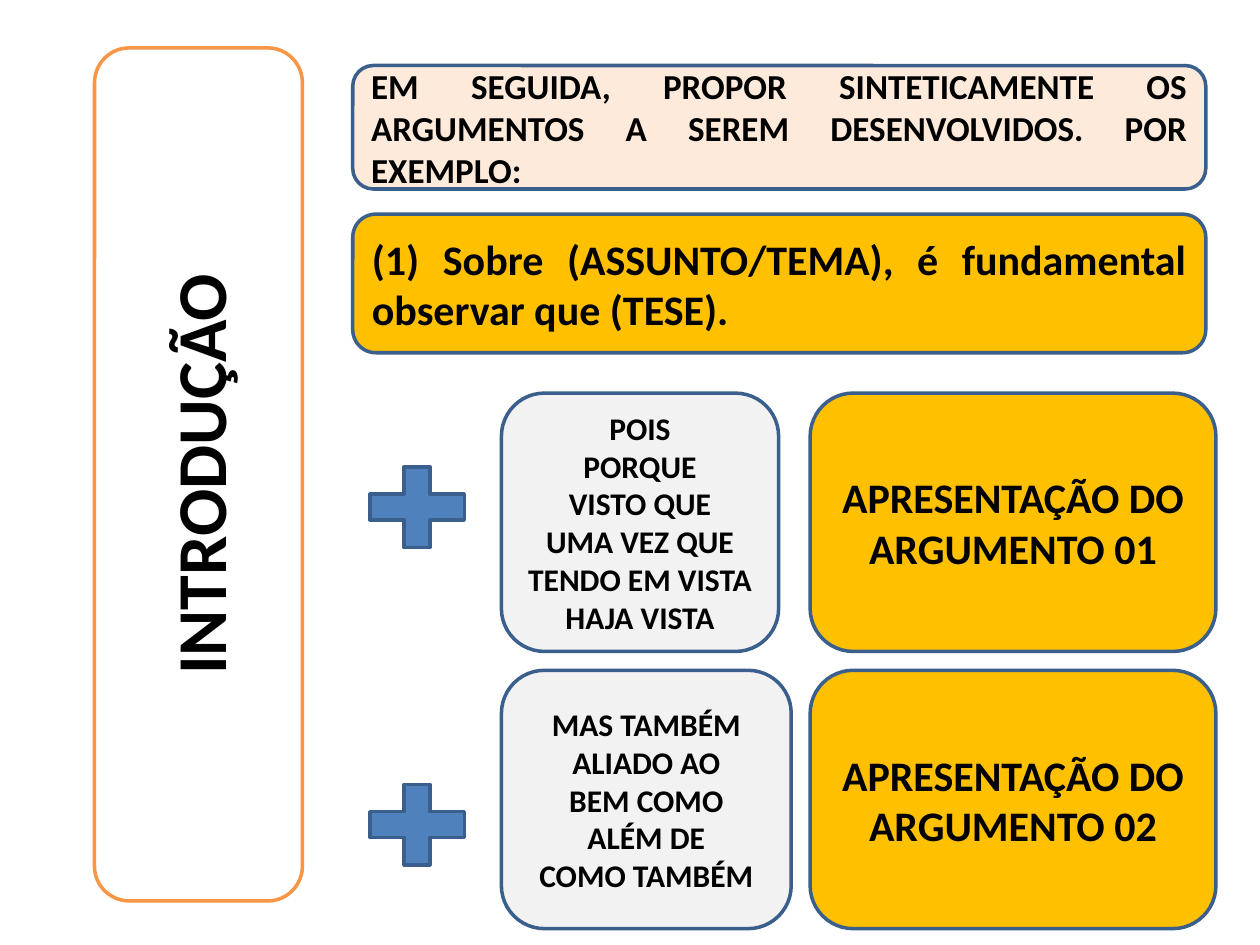
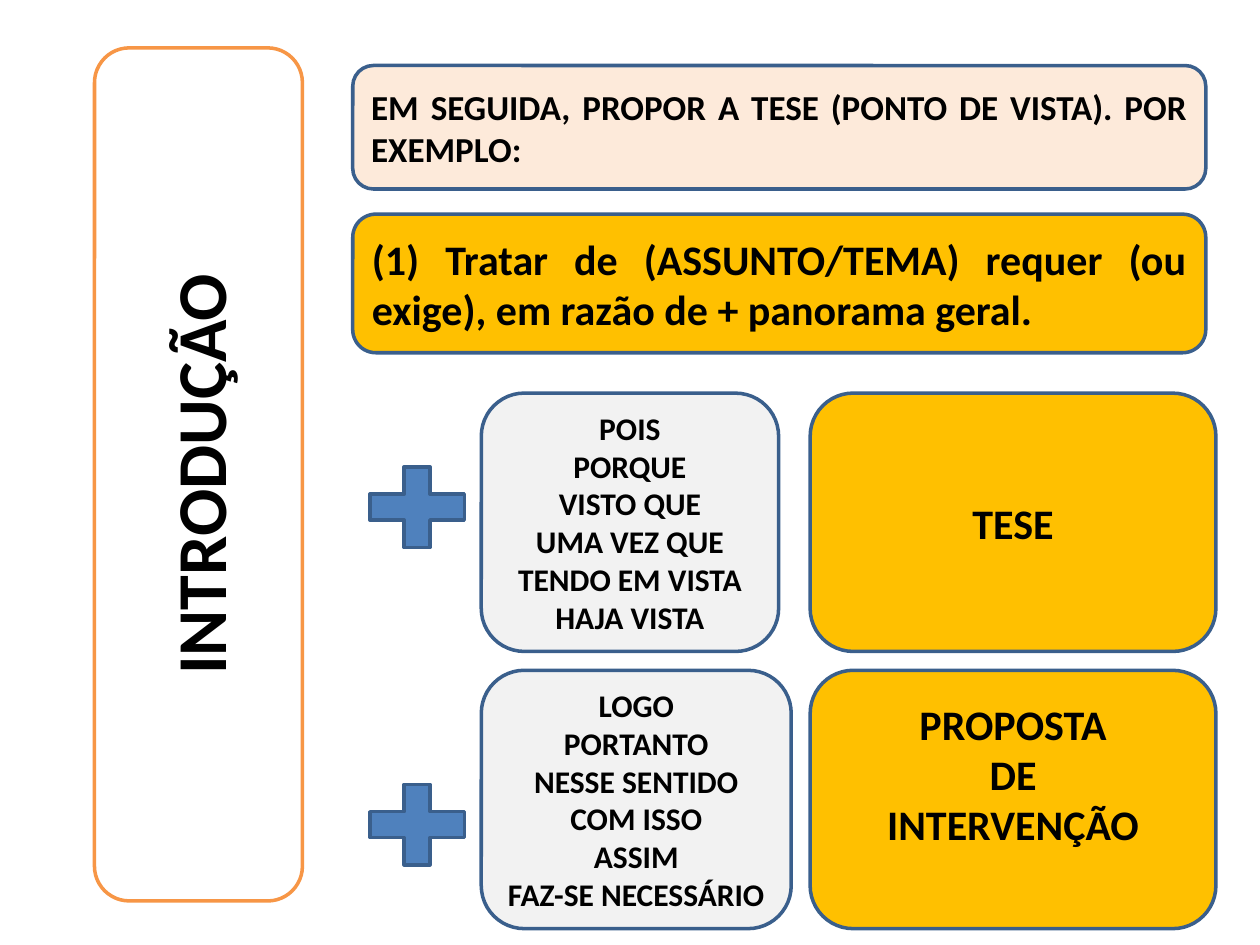
from dataclasses import dataclass

from pptx import Presentation
from pptx.dml.color import RGBColor
from pptx.enum.shapes import MSO_SHAPE
from pptx.enum.text import MSO_ANCHOR, PP_ALIGN
from pptx.shapes.autoshape import Shape
from pptx.slide import Slide
from pptx.util import Pt


@dataclass(frozen=True)
class Theme:
    font: str = "Calibri"
    text: str = "000000"
    white: str = "FFFFFF"
    orange: str = "F79646"
    peach: str = "FDEADA"
    gold: str = "FFC000"
    gray: str = "F2F2F2"
    blue: str = "4F81BD"
    outline: str = "3A5F8C"
    line_width: float = 2
    title_size: float = 40
    main_size: float = 24
    lead_size: float = 20
    list_size: float = 18


@dataclass(frozen=True)
class Box:
    left: float
    top: float
    width: float
    height: float


@dataclass(frozen=True)
class Row:
    """Vertical place of a step, and the right edge of its connectives."""
    top: float
    plus_top: float
    connectives_right: float


@dataclass(frozen=True)
class Step:
    connectives: tuple[str, ...]
    result: tuple[str, ...]
    bottom_inset: float = 3.6


@dataclass(frozen=True)
class Page:
    lead: str
    example: str
    connectives_left: float
    steps: tuple[Step, Step]


THEME = Theme()

# Layout shared by the slides
TITLE = Box(-130.32, 211.68, 487.44, 118.8)
LEAD = Box(201.6, 37.44, 487.44, 70.56)
EXAMPLE = Box(201.6, 122.4, 487.44, 79.2)
PLUS_WIDTH, PLUS_HEIGHT = 73.44, 62.64
RESULT_LEFT, RESULT_WIDTH = 462.96, 231.84
ROW_HEIGHT = 147.6
ROWS = (Row(224.64, 258.48, 444.96), Row(383.04, 439.92, 452.16))

# Content
CAUSES = ("POIS", "PORQUE", "VISTO QUE", "UMA VEZ QUE", "TENDO EM VISTA", "HAJA VISTA")
ADDITIONS = ("MAS TAMBÉM", "ALIADO AO", "BEM COMO", "ALÉM DE", "COMO TAMBÉM")
CONCLUSIONS = ("LOGO", "PORTANTO", "NESSE SENTIDO", "COM ISSO", "ASSIM", "FAZ-SE NECESSÁRIO")

PAGES = (
    Page(
        "EM SEGUIDA, PROPOR SINTETICAMENTE OS ARGUMENTOS A SEREM DESENVOLVIDOS. POR EXEMPLO:",
        "(1) Sobre (ASSUNTO/TEMA), é fundamental observar que (TESE).",
        286.56,
        (Step(CAUSES, ("APRESENTAÇÃO DO ARGUMENTO 01",)),
         Step(ADDITIONS, ("APRESENTAÇÃO DO ARGUMENTO 02",))),
    ),
    Page(
        "EM SEGUIDA, PROPOR A TESE (PONTO DE VISTA). POR EXEMPLO:",
        "(1) Tratar de (ASSUNTO/TEMA) requer (ou exige), em razão de + panorama geral.",
        275.04,
        (Step(CAUSES, ("TESE",)),
         Step(CONCLUSIONS, ("PROPOSTA", "DE", "INTERVENÇÃO"), bottom_inset=33)),
    ),
)


def add_figure(s: Slide, kind: MSO_SHAPE, box: Box, fill: str,
               line: str = THEME.outline) -> Shape:
    sp = s.shapes.add_shape(kind, Pt(box.left), Pt(box.top), Pt(box.width), Pt(box.height))
    sp.shadow.inherit = False
    sp.fill.solid()
    sp.fill.fore_color.rgb = RGBColor.from_string(fill)
    sp.line.color.rgb = RGBColor.from_string(line)
    sp.line.width = Pt(THEME.line_width)
    return sp


def add_card(s: Slide, box: Box, lines: tuple[str, ...], size: float, fill: str,
             line: str = THEME.outline, align: PP_ALIGN = PP_ALIGN.CENTER) -> Shape:
    sp = add_figure(s, MSO_SHAPE.ROUNDED_RECTANGLE, box, fill, line)
    tf = sp.text_frame
    tf.word_wrap = True
    tf.vertical_anchor = MSO_ANCHOR.MIDDLE
    for i, text in enumerate(lines):
        p = tf.add_paragraph() if i else tf.paragraphs[0]
        p.alignment = align
        r = p.add_run()
        r.text = text
        r.font.name = THEME.font
        r.font.size = Pt(size)
        r.font.bold = True
        r.font.color.rgb = RGBColor.from_string(THEME.text)
    return sp


def add_step(s: Slide, row: Row, step: Step, left: float) -> None:
    plus = Box(LEAD.left, row.plus_top, PLUS_WIDTH, PLUS_HEIGHT)
    add_figure(s, MSO_SHAPE.MATH_PLUS, plus, THEME.blue)
    connectives = Box(left, row.top, row.connectives_right - left, ROW_HEIGHT)
    add_card(s, connectives, step.connectives, THEME.list_size, THEME.gray)
    result = Box(RESULT_LEFT, row.top, RESULT_WIDTH, ROW_HEIGHT)
    sp = add_card(s, result, step.result, THEME.main_size, THEME.gold)
    sp.text_frame.margin_bottom = Pt(step.bottom_inset)


def add_page(prs: Presentation, page: Page) -> None:
    s = prs.slides.add_slide(prs.slide_layouts[6])
    # Side title
    title = add_card(s, TITLE, ("INTRODUÇÃO",), THEME.title_size, THEME.white, THEME.orange)
    title.rotation = 270
    # Instruction and example
    add_card(s, LEAD, (page.lead,), THEME.lead_size, THEME.peach, align=PP_ALIGN.JUSTIFY)
    add_card(s, EXAMPLE, (page.example,), THEME.main_size, THEME.gold, align=PP_ALIGN.JUSTIFY)
    # Steps
    for row, step in zip(ROWS, page.steps):
        add_step(s, row, step, page.connectives_left)


def main() -> None:
    prs = Presentation()
    prs.slide_width, prs.slide_height = Pt(720), Pt(540)
    for page in PAGES:
        add_page(prs, page)
    prs.save("out.pptx")


if __name__ == "__main__":
    main()
